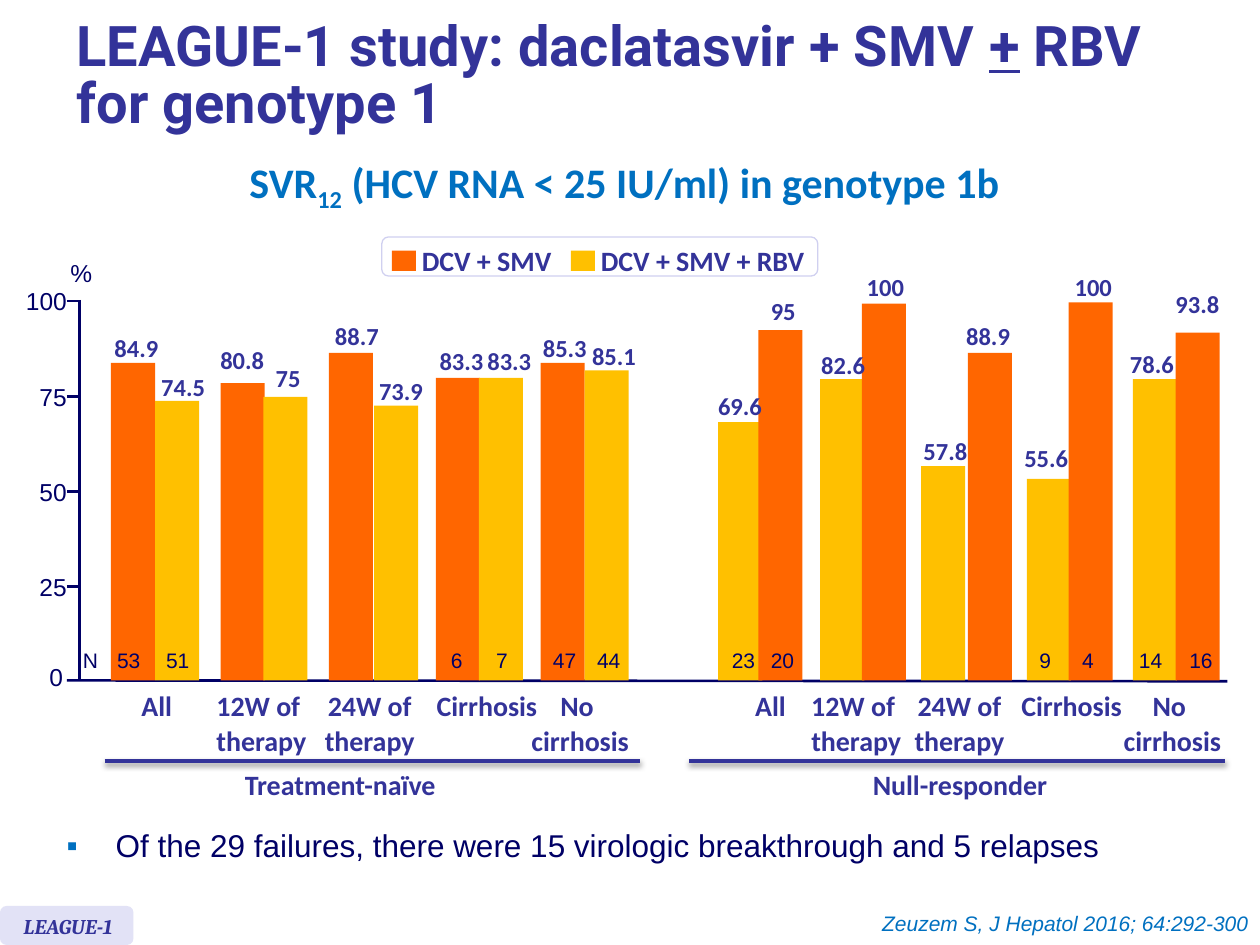
from lxml import etree
from pptx import Presentation
from pptx.dml.color import RGBColor
from pptx.enum.shapes import MSO_CONNECTOR, MSO_SHAPE
from pptx.enum.text import MSO_ANCHOR, MSO_AUTO_SIZE, PP_ALIGN
from pptx.oxml.ns import qn
from pptx.util import Pt

LEFT, CENTER, RIGHT = PP_ALIGN.LEFT, PP_ALIGN.CENTER, PP_ALIGN.RIGHT
TOP, MIDDLE = MSO_ANCHOR.TOP, MSO_ANCHOR.MIDDLE
FIT_SHAPE, NO_FIT = MSO_AUTO_SIZE.SHAPE_TO_FIT_TEXT, MSO_AUTO_SIZE.NONE
RECT, ROUND = MSO_SHAPE.RECTANGLE, MSO_SHAPE.ROUNDED_RECTANGLE
STRAIGHT = MSO_CONNECTOR.STRAIGHT

NAVY, INDIGO, BLUE = "000066", "333399", "0070C0"
ORANGE, YELLOW = "FF6600", "FFC000"
INSETS = (7.2, 3.6, 7.2, 3.6)


def colour(code):
    return RGBColor.from_string(code)


def add_xml(parent, tag, **attributes):
    return etree.SubElement(parent, qn(tag), attributes)


class Painter:
    """Draws styled elements on the current page; lengths are in points."""

    def __init__(self, page):
        self.page = page

    def text(self, place, lines, size, ink=NAVY, face="Arial", bold=None,
             italic=None, align=LEFT, anchor=TOP, insets=INSETS, wrap=False,
             fit=FIT_SHAPE, spacing=None):
        box = self.page.shapes.add_textbox(*map(Pt, place))
        frame = box.text_frame
        frame.word_wrap, frame.auto_size = wrap, fit
        frame.vertical_anchor = anchor
        (frame.margin_left, frame.margin_top,
         frame.margin_right, frame.margin_bottom) = map(Pt, insets)
        for index, line in enumerate(lines):
            para = frame.paragraphs[0] if index == 0 else frame.add_paragraph()
            para.alignment = align
            if index:
                para.space_before = Pt(0.8)
            if spacing:
                para.line_spacing = spacing
            for part in [line] if isinstance(line, str) else line:
                para.add_run().text = part
            if face:
                self.font(para, size, ink, face, bold, italic)
        return frame.paragraphs[0]

    def font(self, para, size, ink, face, bold=None, italic=None):
        font = para.font
        font.size, font.name = Pt(size), face
        font.bold, font.italic = bold, italic
        font.color.rgb = colour(ink)

    def bold_text(self, place, lines, size, **options):
        return self.text(place, lines, size, INDIGO, "Calibri", True, **options)

    def bullet(self, place, line, size):
        para = self.text(place, [line], size, face=None, wrap=True)
        props = para._p.get_or_add_pPr()
        props.set("marL", str(Pt(28)))
        props.set("indent", str(-Pt(28)))
        add_xml(add_xml(props, "a:buClr"), "a:srgbClr", val=BLUE)
        add_xml(props, "a:buFont", typeface="Arial")
        add_xml(props, "a:buChar", char="▪")
        self.font(para, size, NAVY, "Arial")

    def block(self, place, fill, kind=RECT, border=None):
        shape = self.page.shapes.add_shape(kind, *map(Pt, place))
        shape.shadow.inherit = False
        shape.fill.solid()
        shape.fill.fore_color.rgb = colour(fill)
        if kind == ROUND:
            shape.adjustments[0] = 0.17
        if border:
            shape.line.color.rgb = colour(border)
            shape.line.width = Pt(0.75)
        else:
            shape.line.fill.background()

    def line(self, x1, y1, x2, y2, ink=NAVY, width=1.5, shadow=False):
        line = self.page.shapes.add_connector(STRAIGHT, *map(Pt, (x1, y1, x2, y2)))
        line.line.color.rgb = colour(ink)
        line.line.width = Pt(width)
        effects = add_xml(line._element.spPr, "a:effectLst")
        if shadow:
            outer = add_xml(effects, "a:outerShdw", blurRad=str(Pt(3.1)),
                            dist=str(Pt(1.6)), dir="5400000", rotWithShape="0")
            black = add_xml(outer, "a:srgbClr", val="000000")
            add_xml(black, "a:alpha", val="38000")


# Bars: left, top, value, value label left and top, N, N left
NAIVE_BARS = [
    (63.4, 207.4, "84.9", 58.3, 182.9, "53", 59.8),
    (88.6, 229, "74.5", 85, 205.2, "51", 87.8),
    (126, 218.9, "80.8", 118.8, 190.1, "", 0),
    (150.5, 226.8, "75", 150.5, 200.2, "", 0),
    (187.9, 201.6, "88.7", 184.3, 176.4, "", 0),
    (213.8, 231.8, "73.9", 209.5, 207.4, "", 0),
    (249.1, 216, "83.3", 244.1, 190.8, "6", 250.6),
    (273.6, 216, "83.3", 271.4, 190.8, "7", 276.5),
    (308.9, 207.4, "85.3", 303.1, 182.9, "47", 308.9),
    (334.1, 211.7, "85.1", 331.2, 187.9, "44", 334.1),
]
NULL_BARS = [
    (410.4, 241.2, "69.6", 403.2, 216, "23", 411.1),
    (433.4, 188.6, "95", 433.4, 162, "20", 433.4),
    (468.7, 216.7, "82.6", 462.2, 193, "", 0),
    (492.5, 173.5, "100", 488.2, 148.3, "", 0),
    (526.3, 266.4, "57.8", 520.6, 241.9, "", 0),
    (553, 201.6, "88.9", 545, 176.4, "", 0),
    (586.8, 273.6, "55.6", 578.2, 246.2, "9", 586.8),
    (610.6, 172.8, "100", 607, 148.3, "4", 611.3),
    (647.3, 216.7, "78.6", 638.6, 192.2, "14", 643.7),
    (671.8, 190.1, "93.8", 664.6, 157.7, "16", 672.5),
]
# Groups: bars, bar colours, category lefts, rule left, name, name left and width
GROUPS = [
    (NAIVE_BARS, (ORANGE, YELLOW), (73.4, 115.9, 177.8, 241.9, 295.9),
     59.8, "Treatment-naïve", 131.8, 125.3),
    (NULL_BARS, (YELLOW, ORANGE), (424.1, 455.8, 514.8, 576, 634.3),
     393.8, "Null-responder", 491, 115.2),
]
CATEGORIES = [(["All"], 32.4), (["12W of ", "therapy"], 67), (["24W of", "therapy"], 67),
              (["Cirrhosis"], 72.7), (["No ", "cirrhosis"], 71.3)]
VALUE_WIDTHS = {2: 28.8, 3: 36, 4: 39.6}
COUNT_WIDTHS = {1: 21.6, 2: 28.1}
BASE, AXIS_X, TICK_X = 388.8, 45.4, 38.2
BAR_WIDTH, TICK_GAP, COUNT_TOP = 25.2, 54.4, 366.5

deck = Presentation()
deck.slide_width, deck.slide_height = Pt(720), Pt(540)
painter = Painter(deck.slides.add_slide(deck.slide_layouts[6]))

# Title and chart heading
title = painter.text((36.7, 5.8, 657.4, 77),
                     [["LEAGUE-1 study: daclatasvir + SMV ", "+", " RBV for genotype 1"]],
                     32, INDIGO, "Roboto", True, anchor=MIDDLE, wrap=True,
                     fit=NO_FIT, spacing=0.85)
title.runs[1].font.underline = True
heading = painter.text((134.6, 95, 450, 31.7),
                       [["SVR", "12", " (HCV RNA < 25 IU/ml) in genotype 1b "]],
                       24, BLUE, "Calibri", True, align=CENTER, spacing=Pt(23.6))
heading.runs[1]._r.get_or_add_rPr().set("baseline", "-25000")

# Axes
painter.line(AXIS_X, 171.4, AXIS_X, BASE)
painter.line(TICK_X, BASE, 701.3, BASE + 0.5)
ticks = [(tick, TICK_X, 172.1 + index * TICK_GAP)
         for index, tick in enumerate(("100", "75", "50", "25"))]
for _, _, y in ticks:
    painter.line(TICK_X, y, AXIS_X, y)
for tick, right, y in ticks + [("0", 36, 386.6)]:
    width = 8 * len(tick)
    painter.text((right - width, y - 8.6, width, 17.2), [tick], 14,
                 align=RIGHT, anchor=MIDDLE, insets=(0, 0, 0, 0))
painter.text((33.1, 144, 27.4, 24.2), ["%"], 14)
painter.text((40.3, COUNT_TOP, 23, 21.6), ["N"], 12)

# Legend
painter.block((218.2, 135.4, 249.1, 22.3), "FFFFFF", ROUND, "D0D0F0")
for fill, left, name, width in ((ORANGE, 223.9, "DCV + SMV", 89.3),
                                (YELLOW, 326.2, "DCV + SMV + RBV", 132.5)):
    painter.block((left, 143.3, 13.7, 11.5), fill)
    painter.bold_text((left + 10.1, 135.4, width, 26.6), [name], 16)

# Bars with values, counts, categories and group names
for bars, fills, lefts, rule_left, name, name_left, name_width in GROUPS:
    for index, (left, top, *_) in enumerate(bars):
        painter.block((left, top, BAR_WIDTH, BASE - top), fills[index % 2])
    for _, _, value, value_left, value_top, count, count_left in bars:
        painter.bold_text((value_left, value_top, VALUE_WIDTHS[len(value)], 31.7),
                          [value], 14, insets=(7.2,) * 4)
        if count:
            painter.text((count_left, COUNT_TOP, COUNT_WIDTHS[len(count)], 21.6),
                         [count], 12)
    for (lines, width), left in zip(CATEGORIES, lefts):
        painter.bold_text((left, 390, width, 6.6 + 20 * len(lines)), lines, 16, align=CENTER)
    painter.line(rule_left, 434.9, rule_left + 306, 434.9, INDIGO, 2.25, shadow=True)
    painter.bold_text((name_left, 434.9, name_width, 26.6), [name], 16, align=CENTER)

# Finding, study badge and citation
painter.bullet((31, 468.7, 664.6, 28.8),
               "Of the 29 failures, there were 15 virologic breakthrough and 5 relapses", 18)
painter.block((0, 517.7, 76.3, 22.3), "E2E2F6", ROUND)
painter.text((6.5, 518.4, 72, 21.6), ["LEAGUE-1"], 12, INDIGO, "Cambria", True, True, wrap=True)
painter.text((393.8, 517, 326.9, 21.6), ["Zeuzem S, J Hepatol 2016; 64:292-300"], 12, BLUE,
             italic=True, align=RIGHT, wrap=True)

deck.save("out.pptx")
